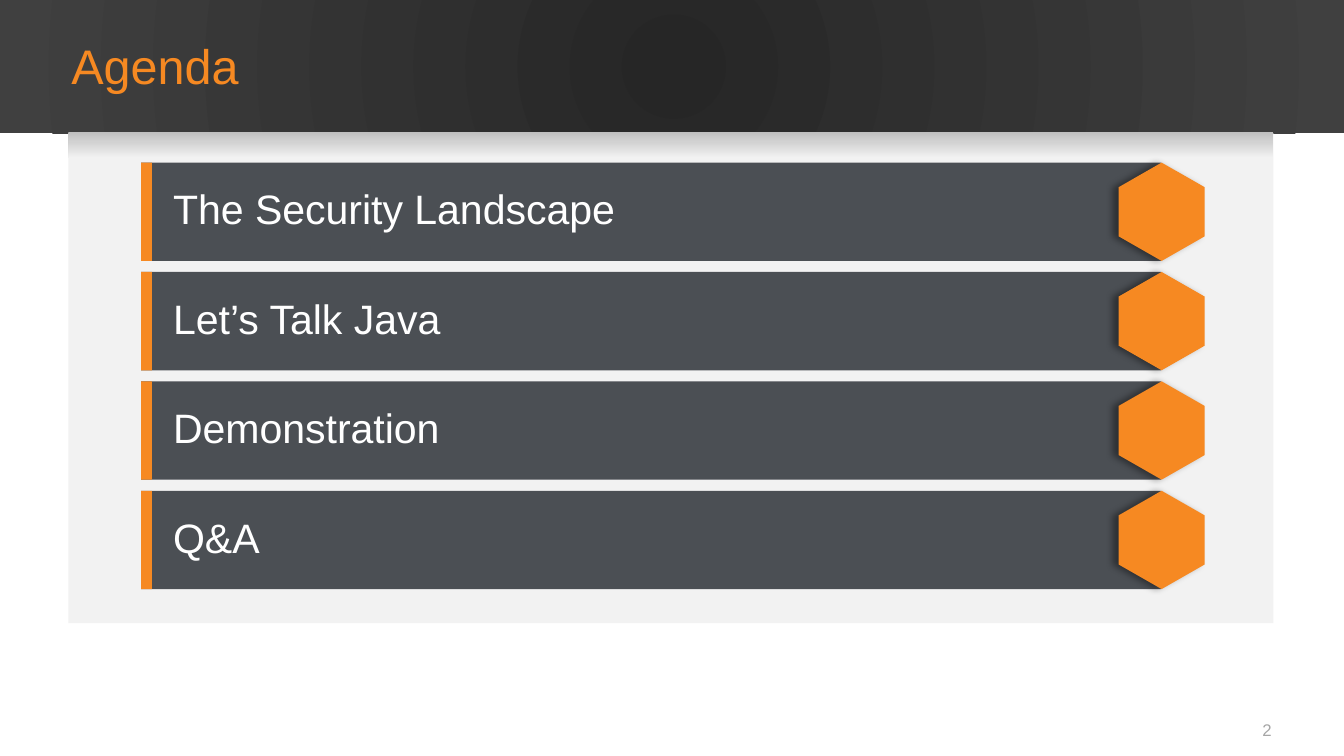
from lxml.etree import SubElement
from pptx import Presentation
from pptx.dml.color import RGBColor
from pptx.enum.shapes import MSO_SHAPE as Shape
from pptx.enum.text import MSO_ANCHOR as Anchor, PP_ALIGN as Align
from pptx.oxml.ns import qn
from pptx.util import Pt

TITLE = "Agenda"
TOPICS = ["The Security Landscape", "Let’s Talk Java", "Demonstration", "Q&A"]
PAGE_NUMBER = "2"

COLORS = {
    "orange": "F68922", "slate": "4B4F54", "panel": "F2F2F2", "white": "FFFFFF",
    "shade": "BFBFBF", "page": "A6A6A6", "dark": "262626", "edge": "404040",
    "black": "000000",
}
FONT = "Arial"
SLIDE_W, SLIDE_H = 720, 405
PANEL_X, PANEL_W = 36.6, 645.6
ROW_X, ROW_W, ROW_H = 75.6, 546.5, 52.7
FIRST_ROW_Y, ROW_PITCH = 87.1, 58.6
ACCENT_W = 5.8
TOPIC_X, TOPIC_W, TOPIC_H = 85.7, 448.6, 31
HEX_X, HEX_W = 599.3, 46
HEX_CORNERS = [(0.5, 0), (1, 0.25), (1, 0.75), (0.5, 1), (0, 0.75), (0, 0.25)]


def rgb(name):
    """Return the named palette colour."""
    return RGBColor.from_string(COLORS[name])


def write_text(frame, text, *, size, color, align=Align.LEFT, spacing=1.0):
    """Put one formatted, vertically centred paragraph in a text frame."""
    frame.word_wrap = True
    frame.vertical_anchor = Anchor.MIDDLE
    paragraph = frame.paragraphs[0]
    paragraph.alignment = align
    paragraph.line_spacing = spacing
    run = paragraph.add_run()
    run.text = text
    run.font.name = FONT
    run.font.size = Pt(size)
    run.font.color.rgb = rgb(color)


def add_box(shapes, x, y, w, h, *colors):
    """Add a borderless rectangle, with a downward gradient for two colours."""
    box = shapes.add_shape(Shape.RECTANGLE, Pt(x), Pt(y), Pt(w), Pt(h))
    box.shadow.inherit = False
    box.line.fill.background()
    if len(colors) == 1:
        box.fill.solid()
        box.fill.fore_color.rgb = rgb(colors[0])
    else:
        box.fill.gradient()
        box.fill.gradient_angle = 270
        for stop, color in zip(box.fill.gradient_stops, colors):
            stop.color.rgb = rgb(color)
    return box


def make_radial(box):
    """Turn a linear gradient into one that spreads from the centre."""
    gradient = box.element.spPr.find(qn("a:gradFill"))
    gradient.remove(gradient.find(qn("a:lin")))
    circle = SubElement(gradient, qn("a:path"), path="circle")
    SubElement(circle, qn("a:fillToRect"), l="50000", t="50000", r="50000", b="50000")


def add_hexagon(shapes, x, y, w, h):
    """Add an orange hexagon standing on a corner, with a shadow to its left."""
    corners = [(Pt(x + w * u), Pt(y + h * v)) for u, v in HEX_CORNERS]
    builder = shapes.build_freeform(*corners[0])
    builder.add_line_segments(corners[1:], close=True)
    hexagon = builder.convert_to_shape()
    hexagon.fill.solid()
    hexagon.fill.fore_color.rgb = rgb("orange")
    hexagon.line.fill.background()
    hexagon.shadow.inherit = False
    effects = hexagon.element.spPr.find(qn("a:effectLst"))
    shadow = SubElement(effects, qn("a:outerShdw"), blurRad=str(Pt(4)), dist=str(Pt(3)),
                        dir="10800000", algn="r", rotWithShape="0")
    tint = SubElement(shadow, qn("a:srgbClr"), val=COLORS["black"])
    SubElement(tint, qn("a:alpha"), val="40000")


def add_label(shapes, x, y, w, h, text, **style):
    """Add a text box with one formatted paragraph."""
    label = shapes.add_textbox(Pt(x), Pt(y), Pt(w), Pt(h))
    write_text(label.text_frame, text, **style)


def add_topic(shapes, topic, y):
    """Add one agenda row: bar, topic, hexagon and accent."""
    add_box(shapes, ROW_X, y, ROW_W, ROW_H, "slate")
    add_label(shapes, TOPIC_X, y + (ROW_H - TOPIC_H) / 2, TOPIC_W, TOPIC_H, topic,
              size=22, color="white", spacing=0.9)
    add_hexagon(shapes, HEX_X, y, HEX_W, ROW_H)
    add_box(shapes, ROW_X, y, ACCENT_W, ROW_H, "orange")


def main():
    """Build the agenda slide and save it."""
    deck = Presentation()
    deck.slide_width, deck.slide_height = Pt(SLIDE_W), Pt(SLIDE_H)
    slide = deck.slides.add_slide(deck.slide_layouts[5])
    shapes = slide.shapes

    make_radial(add_box(shapes, 0, 0, 722, 71.5, "dark", "edge"))
    add_box(shapes, PANEL_X, 71.3, PANEL_W, 262.6, "panel")

    title = shapes.title
    title.left, title.top, title.width, title.height = Pt(31), Pt(10.5), Pt(651.6), Pt(53.3)
    write_text(title.text_frame, TITLE, size=26, color="orange", spacing=0.89)
    title.element.getparent().append(title.element)

    add_label(shapes, 520.6, 380.2, 167.8, 21.6, PAGE_NUMBER,
              size=9, color="page", align=Align.RIGHT)
    add_box(shapes, PANEL_X, 70.7, PANEL_W, 14.2, "shade", "panel")
    for row, topic in enumerate(TOPICS):
        add_topic(shapes, topic, FIRST_ROW_Y + row * ROW_PITCH)

    deck.save("out.pptx")


if __name__ == "__main__":
    main()
